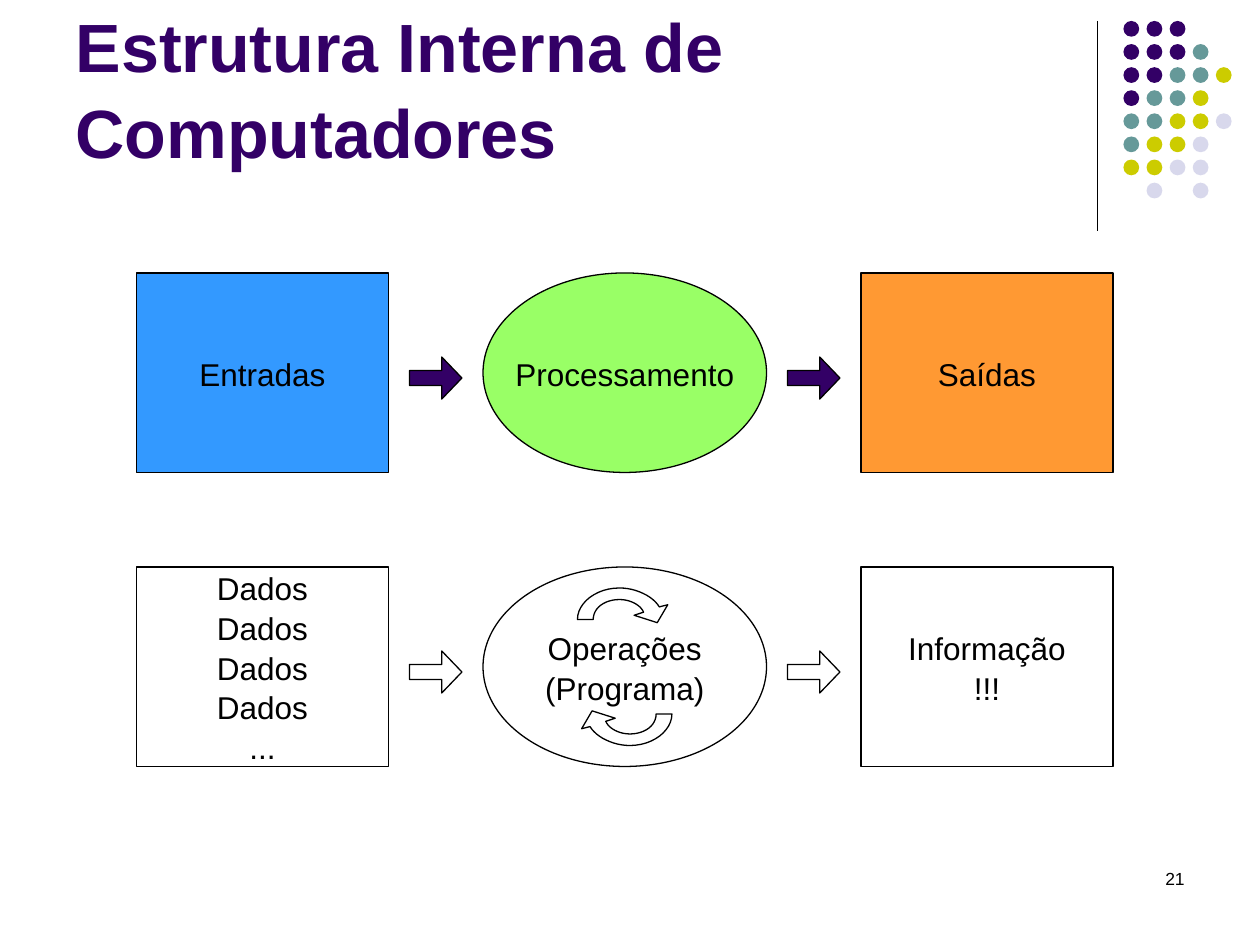
from lxml.etree import SubElement
from pptx import Presentation
from pptx.dml.color import RGBColor
from pptx.enum.shapes import MSO_CONNECTOR, MSO_SHAPE
from pptx.enum.text import MSO_ANCHOR, MSO_AUTO_SIZE, PP_ALIGN
from pptx.oxml.ns import qn
from pptx.util import Pt

PX = 7620  # EMU; 120 px to the inch
COLORS = {
    "ink": "000000", "purple": "330066", "teal": "669999", "olive": "CCCC00",
    "lilac": "D8D8EC", "blue": "3399FF", "green": "99FF66", "orange": "FF9933",
}
DOT_COLORS = {"p": "purple", "t": "teal", "o": "olive", "l": "lilac"}
DOT_ROWS = ["ppp", "pppt", "pptto", "ptto", "ttool", "tool", "ooll", " l l"]

TITLE_FONT = {"name": "Arial", "size": Pt(39), "bold": True}
LABEL_FONT = {"name": "Arial", "size": Pt(18)}
NUMBER_FONT = {"name": "Arial", "size": Pt(10)}

STAGE_HEIGHT, ARROW_DROP = 190, 80
STAGES = [
    (MSO_SHAPE.RECTANGLE, 130, 240),
    (MSO_SHAPE.OVAL, 460, 270),
    (MSO_SHAPE.RECTANGLE, 820, 240),
]
ARROW_LEFTS = [390, 750]
FLOWS = [
    (260, "purple", [("Entradas", "blue"), ("Processamento", "green"), ("Saídas", "orange")]),
    (540, None, [("Dados\nDados\nDados\nDados\n...", None),
                 ("Operações\n(Programa)", None),
                 ("Informação\n!!!", None)]),
]

CYCLE_START = (613, 583)
# Two points are a straight side's end; six numbers are a Bézier curve.
CYCLE_SIDES = [
    (610, 576, 600, 571, 590, 571), (576, 571, 565, 579, 565, 590),
    (550, 590),
    (550, 574, 568, 560, 590, 560), (606, 560, 622, 568, 628, 578),
    (636, 576), (626, 593), (604, 586),
]
CYCLE_TURN = (1190, 1270)
CURVE_STEPS = 12


def px(*lengths):
    return [round(length * PX) for length in lengths]


def rgb(color):
    return RGBColor.from_string(COLORS[color])


def apply_format(target, values):
    for attribute, value in values.items():
        setattr(target, attribute, value)


def write(frame, text, font, color, align, **frame_format):
    frame.text = text
    apply_format(frame, frame_format)
    for paragraph in frame.paragraphs:
        apply_format(paragraph, {"alignment": align, "line_spacing": 1.05})
        apply_format(paragraph.font, font)
        paragraph.font.color.rgb = rgb(color)


def paint(shape, fill=None, line=None):
    shape.shadow.inherit = False
    if fill:
        shape.fill.solid()
        shape.fill.fore_color.rgb = rgb(fill)
    else:
        shape.fill.background()
    if line:
        shape.line.color.rgb = rgb(line)
        shape.line.width = Pt(0.75)
    else:
        shape.line.fill.background()


def add_title(slide, text):
    title = slide.shapes.title
    apply_format(title, dict(zip(("left", "top", "width", "height"), px(60, 60, 900, 110))))
    write(title.text_frame, text, TITLE_FONT, "purple", PP_ALIGN.LEFT,
          auto_size=MSO_AUTO_SIZE.NONE, vertical_anchor=MSO_ANCHOR.BOTTOM, word_wrap=True)


def add_page_number(slide, number):
    box = slide.shapes.add_textbox(*px(860, 820, 280, 60))
    write(box.text_frame, number, NUMBER_FONT, "ink", PP_ALIGN.RIGHT, word_wrap=True)


def add_divider(slide):
    divider = slide.shapes.add_connector(MSO_CONNECTOR.STRAIGHT, *px(1045, 20, 1045, 220))
    divider.line.color.rgb = rgb("ink")
    divider.line.width = Pt(0.75)
    SubElement(divider.line._get_or_add_ln().getparent(), qn("a:effectLst"))


def add_dots(slide):
    dots = slide.shapes.add_group_shape()
    for row, codes in enumerate(DOT_ROWS):
        for column, code in enumerate(codes):
            if code in DOT_COLORS:
                place = px(1070 + 22 * column, 20 + 22 * row, 15, 15)
                paint(dots.shapes.add_shape(MSO_SHAPE.OVAL, *place), DOT_COLORS[code])


def add_stage(slide, outline, left, top, width, label, fill):
    stage = slide.shapes.add_shape(outline, *px(left, top, width, STAGE_HEIGHT))
    paint(stage, fill, "ink")
    write(stage.text_frame, label, LABEL_FONT, "ink", PP_ALIGN.CENTER,
          word_wrap=False, vertical_anchor=MSO_ANCHOR.MIDDLE)


def add_flow_arrow(slide, left, top, fill):
    arrow = slide.shapes.add_shape(MSO_SHAPE.RIGHT_ARROW, *px(left, top, 50, 40))
    arrow.adjustments[0], arrow.adjustments[1] = 0.36, 0.48
    paint(arrow, fill, "ink")


def curve_points(start, side):
    """Points along a cubic Bézier curve, without its start."""
    corners = [start, side[:2], side[2:4], side[4:]]
    for step in range(1, CURVE_STEPS + 1):
        t = step / CURVE_STEPS
        weights = ((1 - t) ** 3, 3 * t * (1 - t) ** 2, 3 * t * t * (1 - t), t ** 3)
        yield tuple(sum(w * corner[axis] for w, corner in zip(weights, corners))
                    for axis in (0, 1))


def cycle_points():
    points = [CYCLE_START]
    for side in CYCLE_SIDES:
        points.extend([side] if len(side) == 2 else list(curve_points(points[-1], side)))
    return points


def add_cycle_arrow(slide, points):
    start, *others = [px(*point) for point in points]
    builder = slide.shapes.build_freeform(*start)
    builder.add_line_segments(others, close=True)
    paint(builder.convert_to_shape(), line="ink")


def main():
    deck = Presentation()
    deck.slide_width, deck.slide_height = px(1200, 900)
    slide = deck.slides.add_slide(deck.slide_layouts[5])

    add_divider(slide)
    add_dots(slide)
    add_page_number(slide, "21")
    add_title(slide, "Estrutura Interna de Computadores")
    for top, arrow_fill, labels in FLOWS:
        for (outline, left, width), (label, fill) in zip(STAGES, labels):
            add_stage(slide, outline, left, top, width, label, fill)
        for left in ARROW_LEFTS:
            add_flow_arrow(slide, left, top + ARROW_DROP, arrow_fill)

    upper = cycle_points()
    lower = [(CYCLE_TURN[0] - x, CYCLE_TURN[1] - y) for x, y in upper]
    for points in (upper, lower):
        add_cycle_arrow(slide, points)
    deck.save("out.pptx")


if __name__ == "__main__":
    main()
